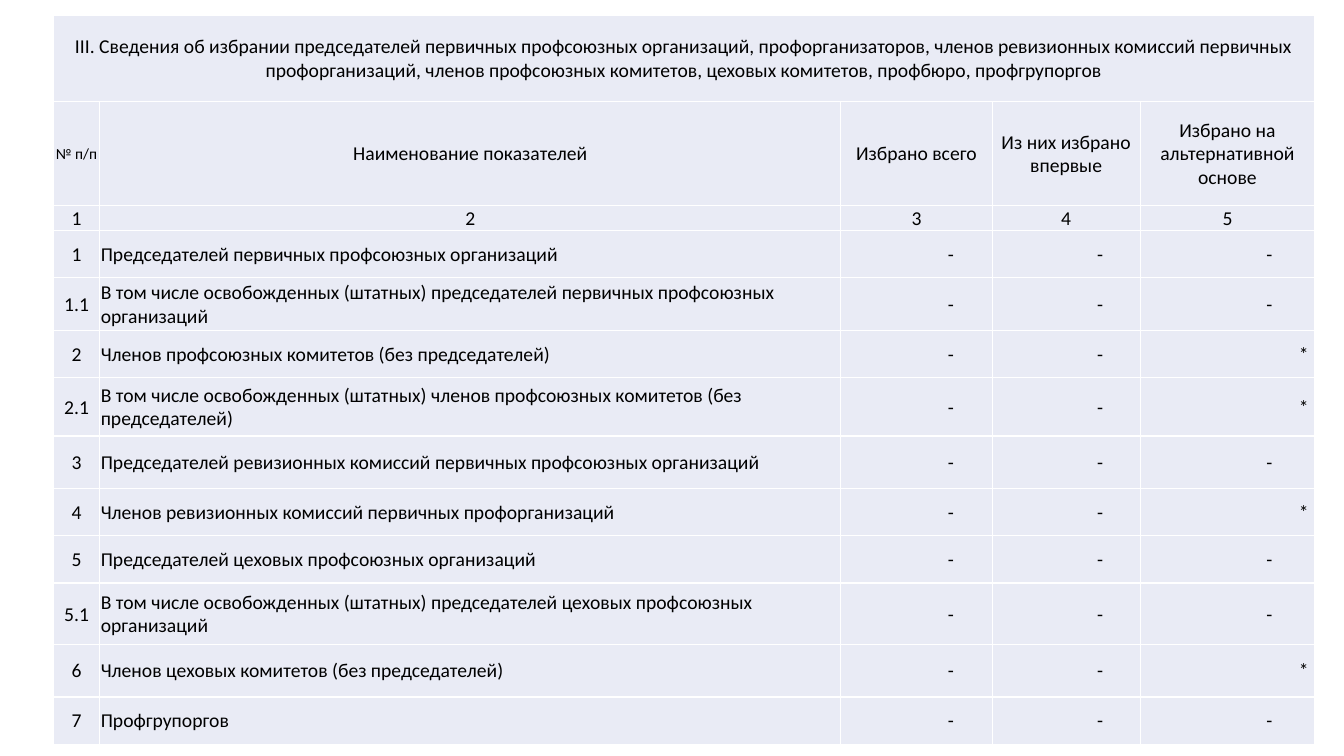
from dataclasses import dataclass

from lxml.etree import SubElement
from pptx import Presentation
from pptx.dml.color import RGBColor
from pptx.enum.text import MSO_ANCHOR, PP_ALIGN
from pptx.oxml.ns import qn
from pptx.table import _Cell as Cell
from pptx.util import Emu, Pt

PX = 9144
BLACK = RGBColor(0x00, 0x00, 0x00)
WHITE = RGBColor(0xFF, 0xFF, 0xFF)
PALE_BLUE = RGBColor(0xE9, 0xEB, 0xF5)
FONT = "Calibri"
BORDER_SIDES = ("a:lnL", "a:lnR", "a:lnT", "a:lnB")

COLUMN_WIDTHS = (46, 735, 150, 147, 173)
TITLE_HEIGHT, HEADING_HEIGHT, NUMBERING_HEIGHT = 86, 103, 22
DASH_MARGINS = (38, 37, 42)
STAR_MARGIN = 6

TITLE = (
    "III. Сведения об избрании председателей первичных профсоюзных организаций, "
    "профорганизаторов, членов ревизионных комиссий первичных профорганизаций, "
    "членов профсоюзных комитетов, цеховых комитетов, профбюро, профгрупоргов"
)
HEADINGS = (
    "№ п/п",
    "Наименование показателей",
    "Избрано всего",
    "Из них избрано впервые",
    "Избрано на альтернативной основе",
)


@dataclass(frozen=True)
class Indicator:
    number: str
    name: str
    height: int
    contested: str = "-"


INDICATORS = (
    Indicator("1", "Председателей первичных профсоюзных организаций", 47),
    Indicator("1.1", "В том числе освобожденных (штатных) председателей первичных профсоюзных организаций", 52),
    Indicator("2", "Членов профсоюзных комитетов (без председателей)", 47, "*"),
    Indicator("2.1", "В том числе освобожденных (штатных) членов профсоюзных комитетов (без председателей)", 58, "*"),
    Indicator("3", "Председателей ревизионных комиссий первичных профсоюзных организаций", 52),
    Indicator("4", "Членов ревизионных комиссий первичных профорганизаций", 47, "*"),
    Indicator("5", "Председателей цеховых профсоюзных организаций", 47),
    Indicator("5.1", "В том числе освобожденных (штатных) председателей цеховых профсоюзных организаций", 61),
    Indicator("6", "Членов цеховых комитетов (без председателей)", 52, "*"),
    Indicator("7", "Профгрупоргов", 47),
)


def px(length: int) -> Emu:
    return Emu(length * PX)


def style_cell(cell: Cell) -> None:
    properties = cell._tc.get_or_add_tcPr()
    for side in BORDER_SIDES:
        line = SubElement(properties, qn(side), w=str(Pt(1)))
        fill = SubElement(line, qn("a:solidFill"))
        SubElement(fill, qn("a:srgbClr"), val=str(WHITE))
    cell.fill.solid()
    cell.fill.fore_color.rgb = PALE_BLUE
    cell.vertical_anchor = MSO_ANCHOR.MIDDLE
    cell.margin_left = cell.margin_top = cell.margin_right = px(1)
    cell.margin_bottom = 0


def write_cell(cell: Cell, text: str, align: PP_ALIGN = PP_ALIGN.CENTER,
               size: int = 14, margin_right: int = 1) -> None:
    cell.margin_right = px(margin_right)
    paragraph = cell.text_frame.paragraphs[0]
    paragraph.alignment = align
    run = paragraph.add_run()
    run.text = text
    run.font.name = FONT
    run.font.size = Pt(size)
    run.font.color.rgb = BLACK


def main() -> None:
    presentation = Presentation()
    presentation.slide_width, presentation.slide_height = px(1333), px(750)
    slide = presentation.slides.add_slide(presentation.slide_layouts[6])

    row_heights = (TITLE_HEIGHT, HEADING_HEIGHT, NUMBERING_HEIGHT,
                   *(indicator.height for indicator in INDICATORS))
    table = slide.shapes.add_table(
        len(row_heights), len(COLUMN_WIDTHS), px(53), px(15),
        px(sum(COLUMN_WIDTHS)), px(sum(row_heights)),
    ).table
    table.first_row = table.horz_banding = False
    for column, width in zip(table.columns, COLUMN_WIDTHS):
        column.width = px(width)
    for row, height in zip(table.rows, row_heights):
        row.height = px(height)
    for cell in table.iter_cells():
        style_cell(cell)

    table.cell(0, 0).merge(table.cell(0, len(COLUMN_WIDTHS) - 1))
    write_cell(table.cell(0, 0), TITLE)
    for index, heading in enumerate(HEADINGS):
        write_cell(table.cell(1, index), heading, size=14 if index else 11)
        write_cell(table.cell(2, index), str(index + 1))

    for row_index, indicator in enumerate(INDICATORS, start=3):
        write_cell(table.cell(row_index, 0), indicator.number)
        write_cell(table.cell(row_index, 1), indicator.name, PP_ALIGN.LEFT)
        marks = ("-", "-", indicator.contested)
        for column_index, (mark, dash_margin) in enumerate(zip(marks, DASH_MARGINS), start=2):
            margin = STAR_MARGIN if mark == "*" else dash_margin
            write_cell(table.cell(row_index, column_index), mark,
                       PP_ALIGN.RIGHT, margin_right=margin)

    presentation.save("out.pptx")


if __name__ == "__main__":
    main()
